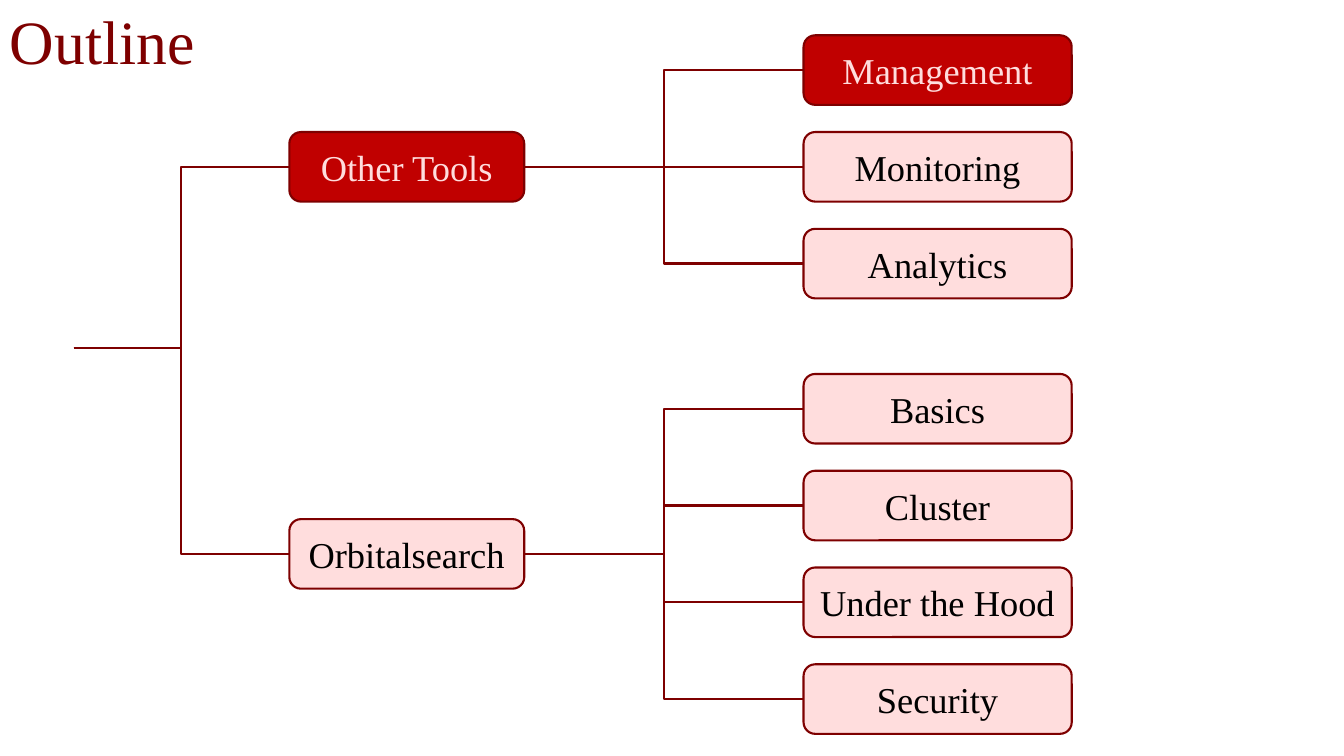
from lxml.etree import SubElement
from pptx import Presentation
from pptx.dml.color import RGBColor
from pptx.enum.shapes import MSO_CONNECTOR, MSO_SHAPE
from pptx.enum.text import MSO_ANCHOR, PP_ALIGN
from pptx.oxml.ns import qn
from pptx.util import Inches, Pt

TITLE = "Outline"
BRANCHES = [
    ("Other Tools", 0, ["Management", "Monitoring", "Analytics"]),
    ("Orbitalsearch", 3.5, ["Basics", "Cluster", "Under the Hood", "Security"]),
]
ACTIVE = {"Other Tools", "Management"}

FONT = "Times New Roman"
DARK, RED, PINK, BLACK = "7E0000", "C00000", "FFDDDD", "000000"
TOP, ROW_PITCH, BOX_HEIGHT = 0.35, 0.96, 0.69
BRANCH_COLUMN = (2.87, 2.33)
TOPIC_COLUMN = (7.97, 2.66)
ROOT = (0.73, 3.45)
LEFT_SIDE, RIGHT_SIDE = 1, 3


def color(value):
    return RGBColor.from_string(value)


def style_text(frame, text, size, text_color, alignment):
    frame.word_wrap = True
    frame.vertical_anchor = MSO_ANCHOR.MIDDLE
    paragraph = frame.paragraphs[0]
    paragraph.text = text
    paragraph.alignment = alignment
    paragraph.font.name = FONT
    paragraph.font.size = Pt(size)
    paragraph.font.color.rgb = color(text_color)
    return paragraph


def style_line(line):
    line.color.rgb = color(DARK)
    line.width = Pt(1.5)


def add_title(slide):
    box = slide.shapes.add_textbox(0, 0, Inches(3), Inches(0.89))
    paragraph = style_text(box.text_frame, TITLE, 44, DARK, PP_ALIGN.LEFT)
    paragraph.line_spacing = 0.9


def add_box(slide, text, column, row):
    left, width = column
    top = TOP + row * ROW_PITCH
    box = slide.shapes.add_shape(
        MSO_SHAPE.ROUNDED_RECTANGLE,
        Inches(left), Inches(top), Inches(width), Inches(BOX_HEIGHT),
    )
    fill, text_color = (RED, PINK) if text in ACTIVE else (PINK, BLACK)
    box.shadow.inherit = False
    box.fill.solid()
    box.fill.fore_color.rgb = color(fill)
    style_line(box.line)
    style_text(box.text_frame, text, 26, text_color, PP_ALIGN.CENTER)
    return box


def add_elbow(slide, child, parent=None):
    root_x, root_y = (Inches(value) for value in ROOT)
    connector = slide.shapes.add_connector(
        MSO_CONNECTOR.ELBOW, root_x, root_y, child.left, child.top + child.height // 2
    )
    if parent is not None:
        connector.begin_connect(parent, RIGHT_SIDE)
    connector.end_connect(child, LEFT_SIDE)
    style_line(connector.line)
    SubElement(connector.element.spPr, qn("a:effectLst"))


def main():
    """Build the outline tree slide and save it."""
    presentation = Presentation()
    presentation.slide_width = Inches(13.33)
    presentation.slide_height = Inches(7.5)
    slide = presentation.slides.add_slide(presentation.slide_layouts[6])
    add_title(slide)
    for name, first_row, topics in BRANCHES:
        middle_row = first_row + (len(topics) - 1) / 2
        branch = add_box(slide, name, BRANCH_COLUMN, middle_row)
        add_elbow(slide, branch)
        for offset, topic in enumerate(topics):
            add_elbow(slide, add_box(slide, topic, TOPIC_COLUMN, first_row + offset), branch)
    presentation.save("out.pptx")


if __name__ == "__main__":
    main()
